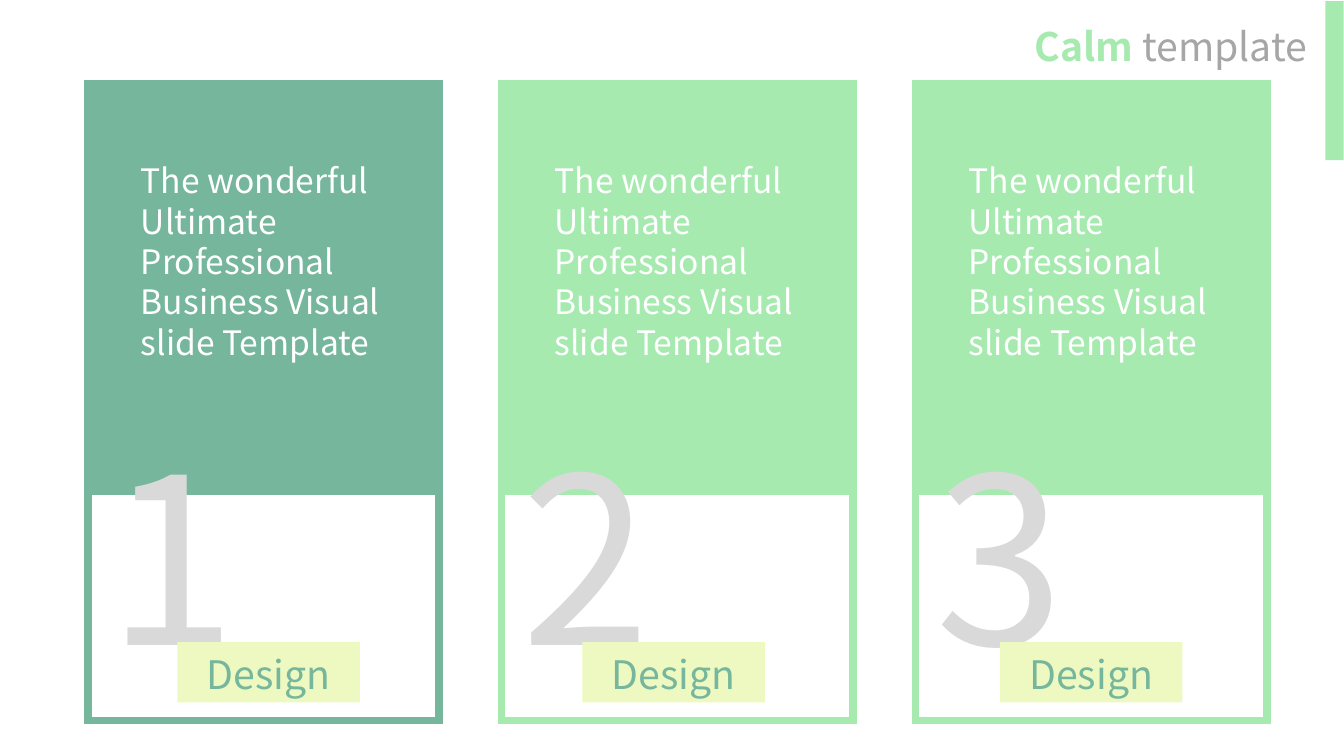
from dataclasses import dataclass

from lxml.etree import SubElement
from pptx import Presentation
from pptx.dml.color import RGBColor
from pptx.enum.shapes import MSO_SHAPE as Preset
from pptx.enum.text import MSO_ANCHOR as Anchor, MSO_AUTO_SIZE as AutoSize, PP_ALIGN as Align
from pptx.oxml.ns import qn
from pptx.util import Cm, Pt

FONT = "Noto Sans CJK JP"
LINE_FACTOR = 1.2
COLORS = {
    "teal": "75B69D",
    "mint": "A6EAB0",
    "lime": "EDF9C0",
    "white": "FFFFFF",
    "light_gray": "D9D9D9",
    "gray": "A6A6A6",
}

# Column grid, in centimetres
FIRST_LEFT = 2.21
COLUMN_STEP = 10.43
CARD_WIDTH = 8.86
BORDER = 5.5
CARD_TEXT = "The wonderful Ultimate Professional Business Visual slide Template"


@dataclass(frozen=True)
class Box:
    left: float
    top: float
    width: float
    height: float

    def lengths(self) -> tuple:
        return Cm(self.left), Cm(self.top), Cm(self.width), Cm(self.height)


@dataclass(frozen=True)
class Card:
    number: str
    color: str
    tag_left: float


CARDS = [
    Card("1", "teal", 4.47),
    Card("2", "mint", 14.68),
    Card("3", "mint", 25.2),
]


def rgb(name: str) -> RGBColor:
    return RGBColor.from_string(COLORS[name])


def write_text(shape, text: str, *, size: float, color: str, bold: bool = False,
               align=Align.LEFT, top_margin: float = 0.13):
    """Write one formatted paragraph and return it."""
    frame = shape.text_frame
    frame.word_wrap = True
    frame.auto_size = AutoSize.NONE
    frame.vertical_anchor = Anchor.TOP
    frame.margin_top = Cm(top_margin)
    paragraph = frame.paragraphs[0]
    paragraph.alignment = align
    paragraph.line_spacing = Pt(size * LINE_FACTOR)
    add_run(paragraph, text, size=size, color=color, bold=bold)
    return paragraph


def add_run(paragraph, text: str, *, size: float, color: str, bold: bool = False) -> None:
    run = paragraph.add_run()
    run.text = text
    run.font.name = FONT
    run.font.size = Pt(size)
    run.font.bold = bold
    run.font.color.rgb = rgb(color)


def add_rectangle(slide, box: Box, fill: str, line: str = ""):
    shape = slide.shapes.add_shape(Preset.RECTANGLE, *box.lengths())
    shape.shadow.inherit = False
    shape.fill.solid()
    shape.fill.fore_color.rgb = rgb(fill)
    if line:
        shape.line.color.rgb = rgb(line)
        shape.line.width = Pt(BORDER)
        # Square outline corners
        outline = shape.element.spPr.find(qn("a:ln"))
        SubElement(outline, qn("a:miter"), lim="800000")
    else:
        shape.line.fill.background()
    return shape


def add_card(slide, card: Card, left: float) -> None:
    # Coloured upper panel and white lower panel
    add_rectangle(slide, Box(left, 2.11, CARD_WIDTH, 10.21), card.color, card.color)
    add_rectangle(slide, Box(left, 12.37, CARD_WIDTH, 5.79), "white", card.color)

    # Large number across both panels
    number = slide.shapes.add_textbox(*Box(left + 0.25, 10.29, 4.19, 7.34).lengths())
    write_text(number, card.number, size=166, color="light_gray")

    # Tag over the foot of the number
    tag = add_rectangle(slide, Box(card.tag_left, 16.18, 4.6, 1.52), "lime")
    write_text(tag, "Design", size=28, color="teal", align=Align.CENTER, top_margin=0.2)

    # Description
    description = slide.shapes.add_textbox(*Box(left + 1.09, 3.91, 6.71, 6.4).lengths())
    write_text(description, CARD_TEXT, size=24, color="white")


def add_title(slide) -> None:
    title = slide.shapes.title
    title.left, title.top, title.width, title.height = Box(25.4, 0.43, 7.8, 1.45).lengths()
    paragraph = write_text(title, "Calm ", size=28, color="mint", bold=True, align=Align.RIGHT)
    add_run(paragraph, "template", size=28, color="gray")


def main() -> None:
    presentation = Presentation()
    presentation.slide_width = Cm(33.87)
    presentation.slide_height = Cm(19.05)
    slide = presentation.slides.add_slide(presentation.slide_layouts.get_by_name("Title Only"))

    add_title(slide)
    for column, card in enumerate(CARDS):
        add_card(slide, card, FIRST_LEFT + column * COLUMN_STEP)

    # Accent bar at the right edge
    add_rectangle(slide, Box(33.4, 0.03, 0.46, 4.01), "mint")

    presentation.save("out.pptx")


if __name__ == "__main__":
    main()
